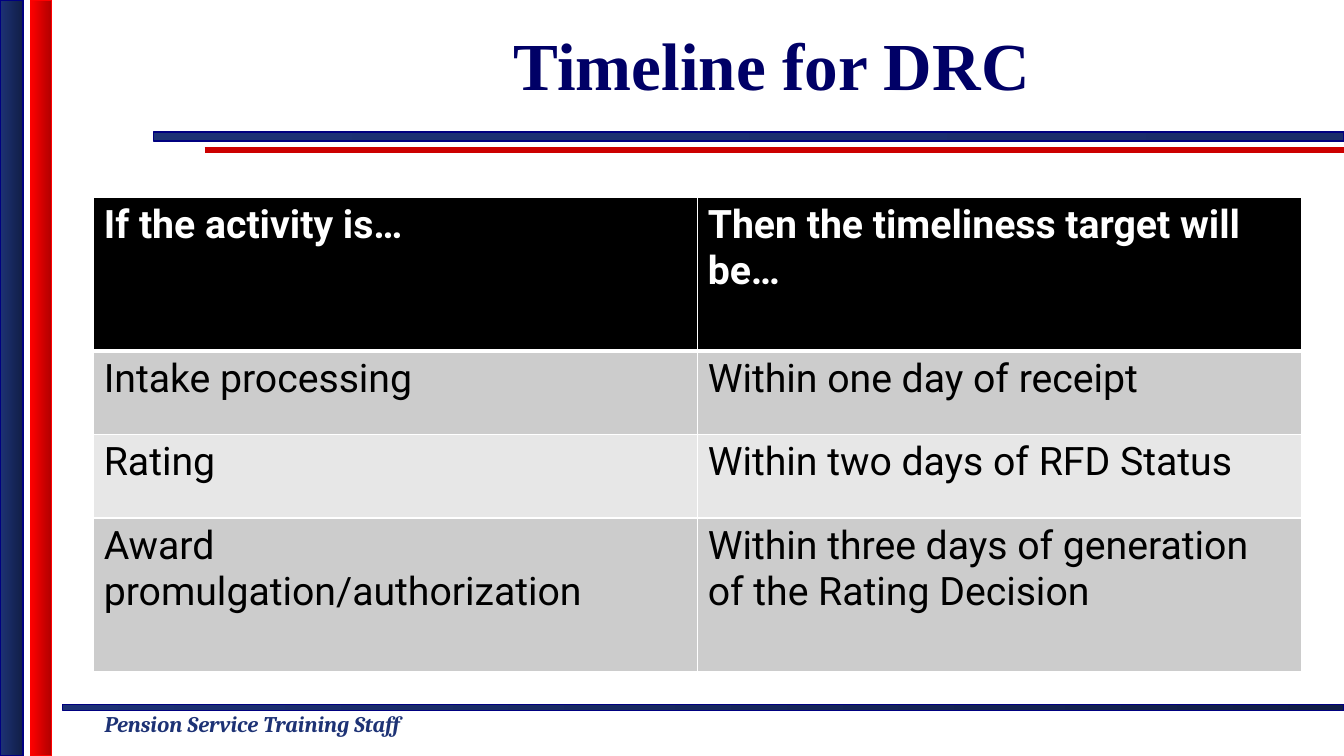
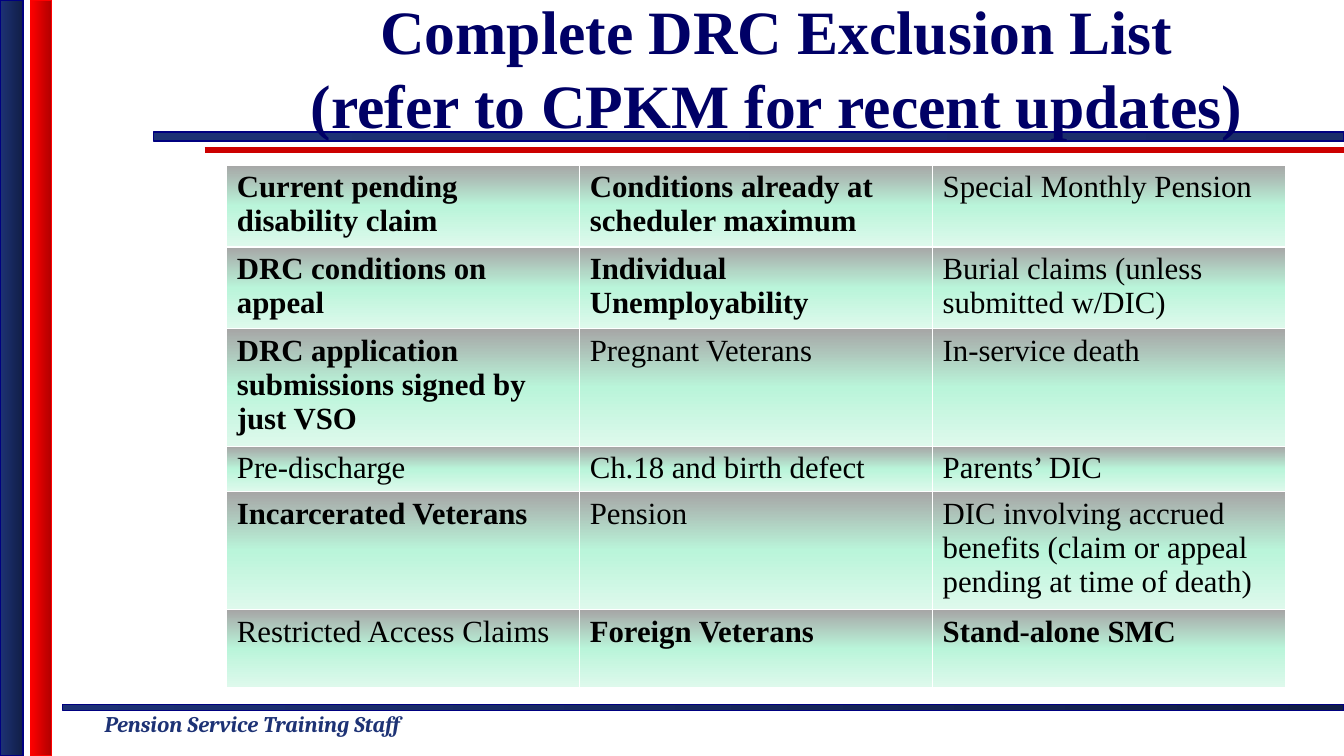
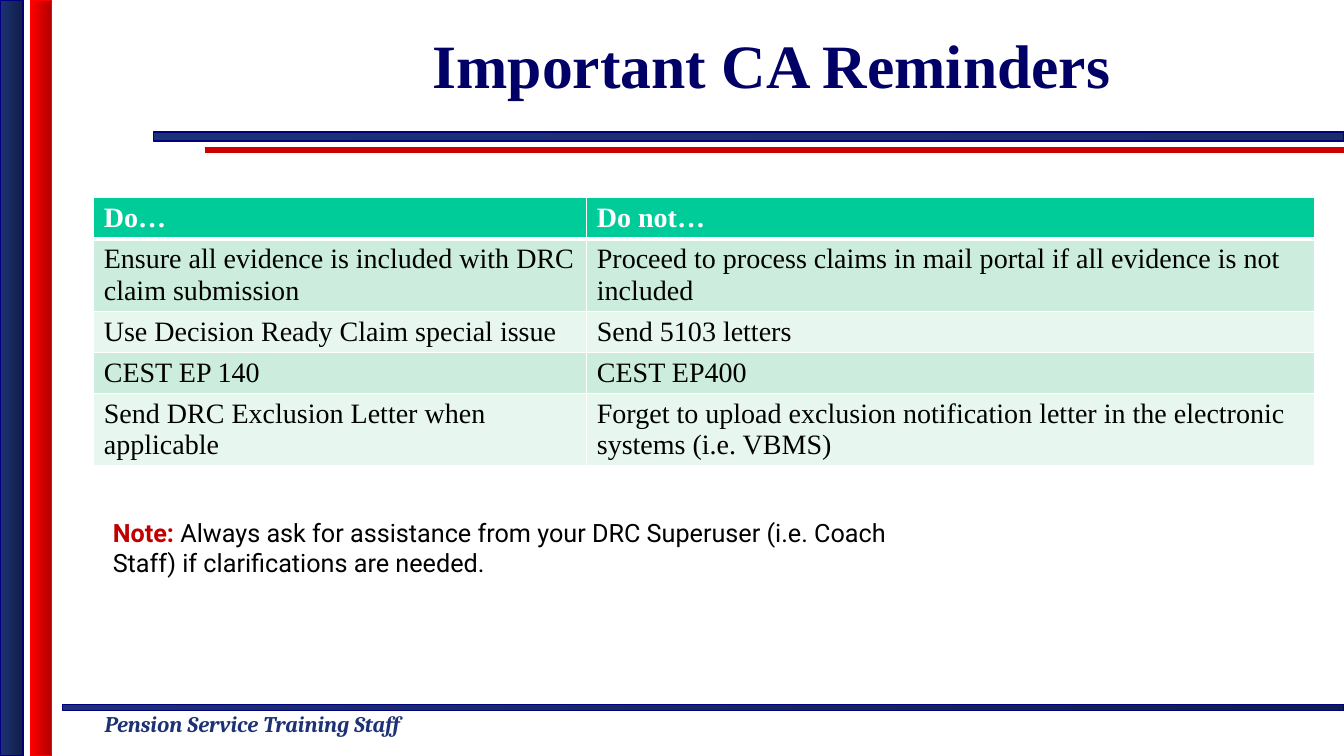
import copy
import dataclasses

import lxml.etree
import pptx
import pptx.dml.color
import pptx.enum.shapes
import pptx.enum.text
import pptx.oxml.ns
import pptx.util

Inches = pptx.util.Inches
Pt = pptx.util.Pt
qn = pptx.oxml.ns.qn


@dataclasses.dataclass(frozen=True)
class Theme:
    serif: str = "Times New Roman"
    sans: str = "Roboto"
    footer_face: str = "Cambria"
    white: str = "FFFFFF"
    black: str = "000000"
    title: str = "000066"
    navy: str = "1D3275"
    navy_edge: str = "000080"
    navy_fade: tuple = ((0, "1D3275"), (1, "111E46"))
    rule_fade: tuple = ((0, "1D3275"), (1, "1A2D69"))
    red: str = "FF0000"
    red_fade: tuple = ((0, "FF0000"), (1, "B20000"))
    rule_red: str = "CC0000"
    note_red: str = "C00000"
    gray_bands: tuple = ("CCCCCC", "E7E7E7")
    green: str = "00CC99"
    green_bands: tuple = ("CCECDE", "E7F6EF")
    mint_fade: tuple = ((0, "A6A6A6"), (0.5, "BAF5DA"), (1, "DEF9EC"))
    title_size: int = 44
    title_large: int = 48
    timeline_size: int = 28
    exclusion_size: int = 22
    reminder_size: int = 20
    note_size: int = 18
    footer_size: int = 16


THEME = Theme()
WIDTH, HEIGHT = 13.33, 7.5


def rgb(color):
    return pptx.dml.color.RGBColor.from_string(color)


def inches(box):
    return [Inches(length) for length in box]


def add_run(paragraph, text, color, **font_values):
    run = paragraph.add_run()
    run.text = text
    run.font.color.rgb = rgb(color)
    for name, value in font_values.items():
        setattr(run.font, name, value)


def paint(fill, element, color, angle=0):
    """Fill with one colour, or with (position, colour) stops at a counter-clockwise angle."""
    if isinstance(color, str):
        fill.solid()
        fill.fore_color.rgb = rgb(color)
        return
    fill.gradient()
    fill.gradient_angle = angle
    stop_list = next(element.iter(qn("a:gsLst")))
    while len(stop_list) < len(color):
        stop_list.append(copy.deepcopy(stop_list[0]))
    for stop, (position, stop_color) in zip(fill.gradient_stops, color):
        stop.position = position
        stop.color.rgb = rgb(stop_color)


def add_band(slide, box, fade, edge):
    band = slide.shapes.add_shape(pptx.enum.shapes.MSO_SHAPE.RECTANGLE, *inches(box))
    band.shadow.inherit = False
    paint(band.fill, band.element, fade)
    band.line.color.rgb = rgb(edge)
    band.line.width = Pt(1)
    return band


def add_red_rule(slide, left, top, right):
    rule = slide.shapes.add_connector(
        pptx.enum.shapes.MSO_CONNECTOR.STRAIGHT, *inches((left, top, right, top)))
    rule.line.color.rgb = rgb(THEME.rule_red)
    rule.line.width = Pt(4)
    lxml.etree.SubElement(rule.element.spPr, qn("a:effectLst"))
    return rule


def add_footer(slide, box):
    footer = slide.shapes.add_textbox(*inches(box))
    footer.text_frame.word_wrap = False
    add_run(footer.text_frame.paragraphs[0], "Pension Service Training Staff", THEME.navy,
            name=THEME.footer_face, size=Pt(THEME.footer_size), bold=True, italic=True)
    return footer


def install_frame(layout, slide):
    """Build the bands and footer on a slide, then move them into its layout."""
    for placeholder in list(layout.placeholders)[1:]:
        layout.shapes.element.remove(placeholder.element)
    frame_parts = [
        add_red_rule(slide, 2.03, 1.49, WIDTH),
        add_band(slide, (0.62, 6.99, WIDTH - 0.62, 0.06), THEME.navy_fade, THEME.navy_edge),
        add_band(slide, (1.52, 1.31, WIDTH - 1.52, 0.09), THEME.rule_fade, THEME.navy_edge),
        add_band(slide, (0, 0, 0.23, HEIGHT), THEME.navy_fade, THEME.navy_edge),
        add_band(slide, (0.3, 0, 0.21, HEIGHT), THEME.red_fade, THEME.red),
        add_footer(slide, (0.94, 7, 3.77, 0.37)),
    ]
    for part in frame_parts:
        layout.shapes.element.append(part.element)


def set_title(slide, text, size=THEME.title_size, left=2.34, top=0):
    title = slide.shapes.title
    title.left, title.top, title.width, title.height = inches((left, top, 10.63, 1.26))
    frame = title.text_frame
    frame_format = {
        "auto_size": pptx.enum.text.MSO_AUTO_SIZE.NONE,
        "vertical_anchor": pptx.enum.text.MSO_ANCHOR.MIDDLE,
        "word_wrap": True,
    }
    for name, value in frame_format.items():
        setattr(frame, name, value)
    paragraph = frame.paragraphs[0]
    paragraph.alignment = pptx.enum.text.PP_ALIGN.CENTER
    for index, line in enumerate(text.split("\n")):
        if index:
            paragraph.add_line_break()
        add_run(paragraph, line, THEME.title, name=THEME.serif, size=Pt(size), bold=True)


def add_borders(cell_element, bottom):
    properties = cell_element.get_or_add_tcPr()
    for side, points in (("L", 1), ("R", 1), ("T", 1), ("B", bottom)):
        border = lxml.etree.SubElement(properties, qn(f"a:ln{side}"), w=str(Pt(points)))
        solid = lxml.etree.SubElement(border, qn("a:solidFill"))
        lxml.etree.SubElement(solid, qn("a:srgbClr"), val=THEME.white)


def add_grid(slide, origin, columns, heights, rows, face, size, fills, header=None, bold=()):
    """Add a table; fills repeat down the body, and bold holds (row, column) pairs."""
    box = (*origin, sum(columns), sum(heights))
    frame = slide.shapes.add_table(len(rows), len(columns), *inches(box))
    table = frame.table
    table.first_row = header is not None
    table.horz_banding = False
    for column, width in zip(table.columns, columns):
        column.width = Inches(width)
    for row, height in zip(table.rows, heights):
        row.height = Inches(height)
    cell_elements = frame.element.iter(qn("a:tc"))
    for index, (cell, element) in enumerate(zip(table.iter_cells(), cell_elements)):
        row, column = divmod(index, len(columns))
        is_header = header is not None and row == 0
        add_borders(element, 3 if is_header else 1)
        fill = header if is_header else fills[(row - 1) % len(fills)]
        paint(cell.fill, element, fill, angle=270)
        add_run(cell.text_frame.paragraphs[0], rows[row][column],
                THEME.white if is_header else THEME.black,
                name=face, size=Pt(size), bold=is_header or (row, column) in bold)


def add_note(slide, box):
    note = slide.shapes.add_textbox(*inches(box))
    note.text_frame.word_wrap = True
    paragraph = note.text_frame.paragraphs[0]
    font = {"name": THEME.sans, "size": Pt(THEME.note_size)}
    add_run(paragraph, "Note: ", THEME.note_red, bold=True, **font)
    add_run(paragraph, "Always ask for assistance from your DRC Superuser (i.e. Coach Staff) "
            "if clarifications are needed.", THEME.black, bold=False, **font)


def build_timeline(slide):
    set_title(slide, "Timeline for DRC", size=THEME.title_large)
    rows = [
        ("If the activity is…", "Then the timeliness target will be…"),
        ("Intake processing", "Within one day of receipt"),
        ("Rating", "Within two days of RFD Status"),
        ("Award promulgation/authorization",
         "Within three days of generation of the Rating Decision"),
    ]
    add_grid(slide, (0.93, 1.96), [5.99] * 2, [1.52, 0.83, 0.83, 1.52], rows,
             THEME.sans, THEME.timeline_size, THEME.gray_bands, header=THEME.black)


def build_exclusions(slide):
    set_title(slide, "Complete DRC Exclusion List\n(refer to CPKM for recent updates)",
              left=2.39, top=0.03)
    rows = [
        ("Current pending disability claim", "Conditions already at scheduler maximum",
         "Special Monthly Pension"),
        ("DRC conditions on appeal", "Individual Unemployability",
         "Burial claims (unless submitted w/DIC)"),
        ("DRC application submissions signed by just VSO", "Pregnant Veterans",
         "In-service death"),
        ("Pre-discharge", "Ch.18 and birth defect", "Parents’ DIC"),
        ("Incarcerated Veterans", "Pension",
         "DIC involving accrued benefits (claim or appeal pending at time of death)"),
        ("Restricted Access Claims", "Foreign Veterans", "Stand-alone SMC"),
    ]
    bold = {(0, 0), (0, 1), (1, 0), (1, 1), (2, 0), (4, 0), (5, 1), (5, 2)}
    add_grid(slide, (2.25, 1.64), [3.5] * 3, [0.81, 0.81, 1.17, 0.45, 1.17, 0.77], rows,
             THEME.serif, THEME.exclusion_size, [THEME.mint_fade], bold=bold)


def build_reminders(slide):
    set_title(slide, "Important CA Reminders")
    rows = [
        ("Do…", "Do not…"),
        ("Ensure all evidence is included with DRC claim submission",
         "Proceed to process claims in mail portal if all evidence is not included"),
        ("Use Decision Ready Claim special issue", "Send 5103 letters"),
        ("CEST EP 140", "CEST EP400"),
        ("Send DRC Exclusion Letter when applicable",
         "Forget to upload exclusion notification letter in the electronic systems (i.e. VBMS)"),
    ]
    add_grid(slide, (0.93, 1.96), [4.89, 7.22], [0.41, 0.71, 0.41, 0.41, 0.71], rows,
             THEME.serif, THEME.reminder_size, THEME.green_bands, header=THEME.green)
    add_note(slide, (1.02, 5.08, 8.48, 0.71))


def main():
    deck = pptx.Presentation()
    deck.slide_width, deck.slide_height = inches((WIDTH, HEIGHT))
    title_only = deck.slide_layouts[5]
    builders = (build_timeline, build_exclusions, build_reminders)
    slides = [deck.slides.add_slide(title_only) for _ in builders]
    install_frame(title_only, slides[0])
    for build, slide in zip(builders, slides):
        build(slide)
    deck.save("out.pptx")


if __name__ == "__main__":
    main()
